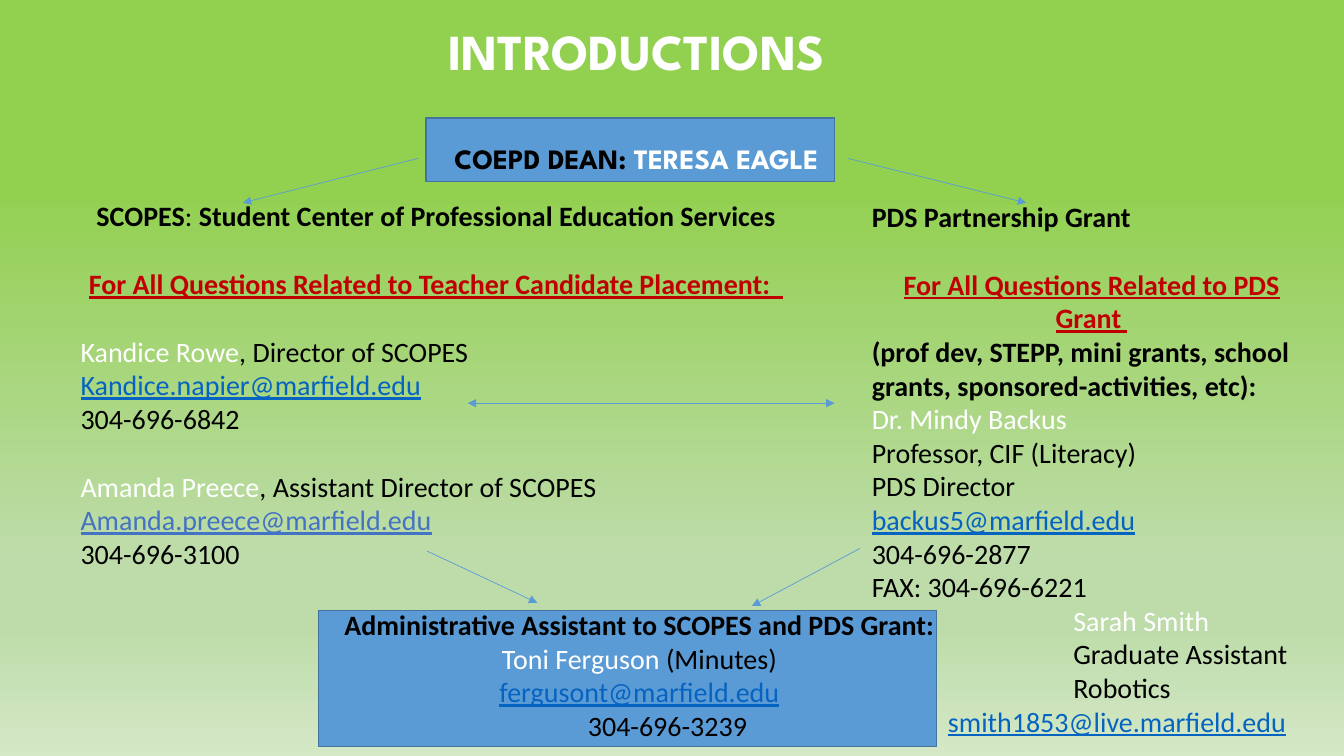
import copy

import pptx
import pptx.dml.color
import pptx.enum.shapes
import pptx.enum.text
import pptx.oxml.ns
import pptx.oxml.xmlchemy
import pptx.util
from lxml import etree
from pptx.util import Cm, Pt

COLOURS = {
    "black": "000000",
    "white": "FFFFFF",
    "red": "C00000",
    "link": "0563C1",
    "soft link": "4472C4",
    "box": "5B9BD5",
    "box edge": "43739E",
}
BACKGROUND_STOPS = [(0.25, "92D050"), (0.74, "BEDCAA"), (0.83, "BEDCAA"), (1, "D4E8C6")]
CENTRE = pptx.enum.text.PP_ALIGN.CENTER
LEFT = pptx.enum.text.PP_ALIGN.LEFT
LINE_GAP = Pt(24.4)
TITLE_GAP = Pt(43.9)


def rgb(name):
    return pptx.dml.color.RGBColor.from_string(COLOURS[name])


def paint_background(slide):
    fill = slide.background.fill
    fill.gradient()
    fill.gradient_angle = 270
    stop_list = next(slide.element.iter(pptx.oxml.ns.qn("a:gsLst")))
    while len(stop_list) < len(BACKGROUND_STOPS):
        stop_list.append(copy.deepcopy(stop_list[0]))
    for stop, (position, colour) in zip(fill.gradient_stops, BACKGROUND_STOPS):
        stop.position = position
        stop.color.rgb = pptx.dml.color.RGBColor.from_string(colour)


def add_box(slide, left, top, width, height):
    shape = slide.shapes.add_shape(
        pptx.enum.shapes.MSO_SHAPE.RECTANGLE, Cm(left), Cm(top), Cm(width), Cm(height))
    shape.shadow.inherit = False
    shape.fill.solid()
    shape.fill.fore_color.rgb = rgb("box")
    shape.line.color.rgb = rgb("box edge")
    shape.line.width = Pt(1)


def add_text(slide, left, top, width, height):
    frame = slide.shapes.add_textbox(Cm(left), Cm(top), Cm(width), Cm(height)).text_frame
    frame.word_wrap = True
    return frame


def add_line(frame, *runs, align=LEFT, before=0, indent=0, font="Calibri", size=20):
    """Each run is (text, colour, style), where style may hold b (bold) and u (underline)."""
    first = frame.paragraphs[0]
    paragraph = frame.add_paragraph() if first.runs else first
    paragraph.alignment = align
    paragraph.space_before = before
    if indent:
        properties = paragraph._p.get_or_add_pPr()
        properties.set("marL", str(Cm(indent)))
        properties.set("indent", "0")
    for text, colour, style in runs:
        run = paragraph.add_run()
        run.text = text
        run.font.name = font
        run.font.size = Pt(size)
        run.font.bold = "b" in style
        run.font.underline = "u" in style
        run.font.color.rgb = rgb(colour)


def add_arrow(slide, start, end, both_ends=False):
    connector = slide.shapes.add_connector(
        pptx.enum.shapes.MSO_CONNECTOR.STRAIGHT, *map(Cm, start + end))
    connector.line.color.rgb = rgb("box")
    connector.line.width = Pt(0.5)
    line = connector.line._get_or_add_ln()
    for tag in ("a:headEnd", "a:tailEnd") if both_ends else ("a:tailEnd",):
        etree.SubElement(line, pptx.oxml.ns.qn(tag), type="triangle")
    etree.SubElement(connector._element.spPr, pptx.oxml.ns.qn("a:effectLst"))


def add_heading(slide):
    frame = add_text(slide, 6.86, 0.38, 18.36, 4.19)
    add_line(frame, ("INTRODUCTIONS", "white", "b"),
             align=CENTRE, font="League Spartan", size=36)
    add_line(frame, ("COEPD DEAN: ", "black", "b"), ("TERESA EAGLE", "white", "b"),
             align=CENTRE, before=TITLE_GAP, font="League Spartan")


def add_scopes(slide):
    frame = add_text(slide, 1.78, 4.88, 18.42, 9.65)
    add_line(frame, ("SCOPES", "black", "b"), (": ", "black", ""),
             ("Student Center of Professional Education Services", "black", "b"), align=CENTRE)
    add_line(frame, ("For All Questions Related to Teacher Candidate Placement:  ", "red", "bu"),
             align=CENTRE, before=LINE_GAP)
    staff = [
        ("Kandice Rowe", ", Director of SCOPES",
         "Kandice.napier@marfield.edu", "link", "304-696-6842"),
        ("Amanda Preece", ", Assistant Director of SCOPES",
         "Amanda.preece@marfield.edu", "soft link", "304-696-3100"),
    ]
    for name, role, address, address_colour, phone in staff:
        add_line(frame, (name, "white", ""), (role, "black", ""), before=LINE_GAP)
        add_line(frame, (address, address_colour, "u"))
        add_line(frame, (phone, "black", ""))


def add_grant(slide):
    frame = add_text(slide, 21.72, 4.9, 11.58, 14.1)
    add_line(frame, ("PDS Partnership Grant", "black", "b"))
    add_line(frame, ("For All Questions Related to PDS Grant ", "red", "bu"),
             align=CENTRE, before=LINE_GAP)
    add_line(frame, ("(prof dev, STEPP, mini grants, school grants, "
                     "sponsored-activities, etc):", "black", "b"))
    contacts = [
        ("Dr. Mindy Backus", "white", "", 0),
        ("Professor, CIF (Literacy)", "black", "", 0),
        ("PDS Director", "black", "", 0),
        ("backus5@marfield.edu", "link", "u", 0),
        ("304-696-2877", "black", "", 0),
        ("FAX: 304-696-6221", "black", "", 0),
        ("Sarah Smith", "white", "", 5.08),
        ("Graduate Assistant", "black", "", 5.08),
        ("Robotics", "black", "", 5.08),
        ("smith1853@live.marfield.edu", "link", "u", 1.92),
    ]
    for text, colour, style, indent in contacts:
        add_line(frame, (text, colour, style), indent=indent)


def add_assistant(slide):
    frame = add_text(slide, 8.33, 15.19, 15.57, 3.68)
    add_line(frame, ("Administrative Assistant to SCOPES and PDS Grant:", "black", "b"),
             align=CENTRE)
    add_line(frame, ("Toni Ferguson ", "white", ""), ("(Minutes)", "black", ""), align=CENTRE)
    add_line(frame, ("fergusont@marfield.edu", "link", "u"), align=CENTRE)
    add_line(frame, ("304-696-3239", "black", ""), align=CENTRE, indent=1.42)


def main():
    presentation = pptx.Presentation()
    presentation.slide_width = Cm(33.87)
    presentation.slide_height = Cm(19.05)
    slide = presentation.slides.add_slide(presentation.slide_layouts[6])
    paint_background(slide)

    # Boxes behind the assistant and the dean
    add_box(slide, 8.03, 15.39, 15.57, 3.43)
    add_box(slide, 10.74, 2.97, 10.29, 1.6)

    # Text
    add_heading(slide)
    add_scopes(slide)
    add_grant(slide)
    add_assistant(slide)

    # Arrows: dean to both offices, between the offices, offices to assistant
    add_arrow(slide, (21.36, 3.99), (25.86, 5.11))
    add_arrow(slide, (10.54, 3.99), (6.12, 5.11))
    add_arrow(slide, (11.79, 10.16), (21.03, 10.16), both_ends=True)
    add_arrow(slide, (10.77, 13.89), (13.54, 15.19))
    add_arrow(slide, (21.67, 13.82), (18.95, 15.27))

    presentation.save("out.pptx")


if __name__ == "__main__":
    main()
